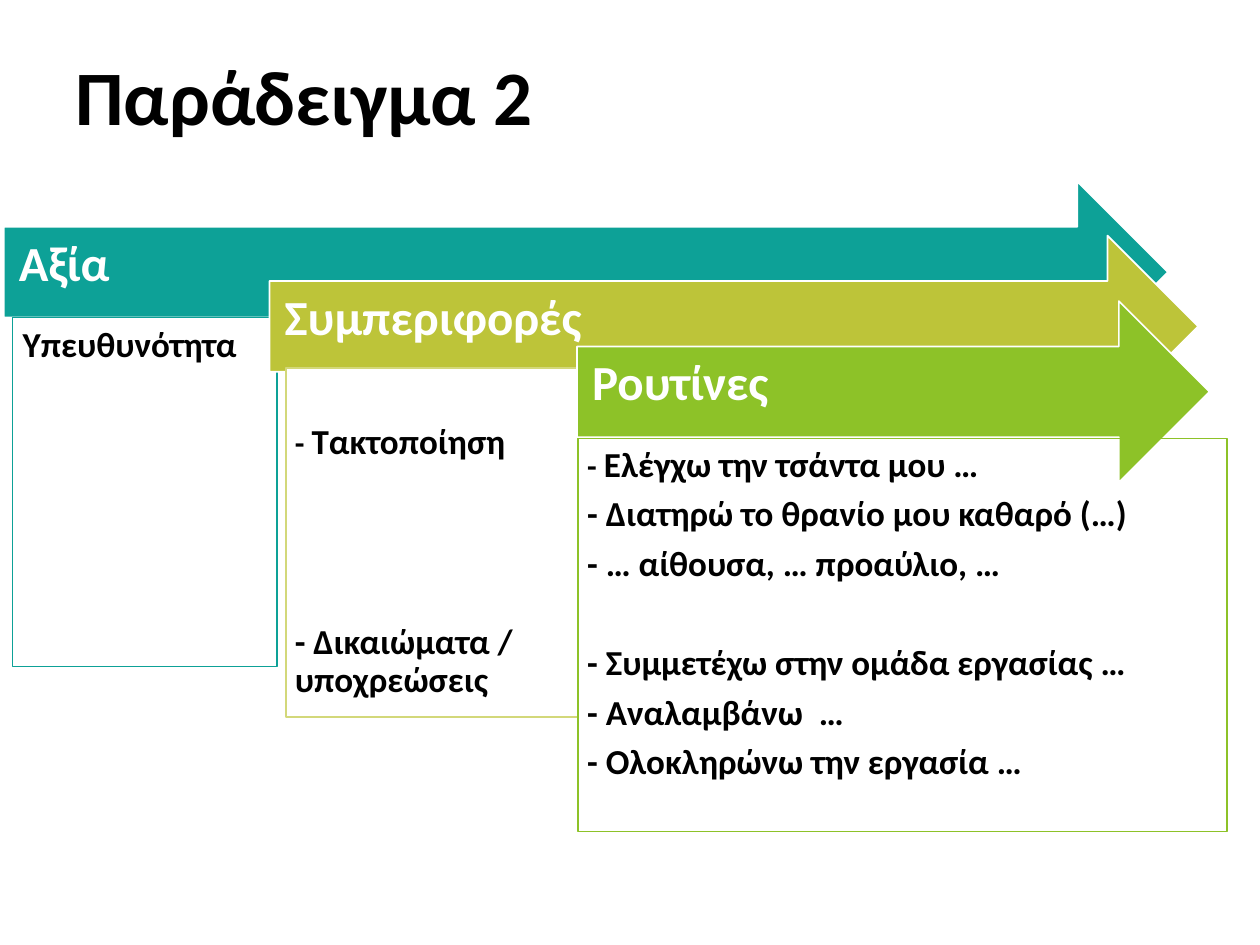
from pptx import Presentation
from pptx import util as u
from pptx.dml.color import RGBColor
from pptx.enum import shapes, text

WHITE = RGBColor(255, 255, 255)
BLACK = RGBColor(0, 0, 0)
TEAL = RGBColor(0x0D, 0xA1, 0x97)
OLIVE = RGBColor(0xBD, 0xC4, 0x39)
PALE = RGBColor(0xD3, 0xD8, 0x7A)
GREEN = RGBColor(0x8D, 0xC2, 0x28)
FONT = "Calibri"

# Content: lines are (blank rows above, text, size of the leading dash)
TITLE = "Παράδειγμα 2"
STEPS = [
    dict(head="Αξία", fill=TEAL, arrow=(0.03, 1.44, 9.24),
         box=(0.1, 2.52, 2.1, 2.77), edge=TEAL, back=WHITE,
         inset=0.08, top=0.08, lines=[(0, "Υπευθυνότητα", 20)]),
    dict(head="Συμπεριφορές", fill=OLIVE, arrow=(2.14, 1.87, 7.37),
         box=(2.27, 2.92, 2.32, 2.77), edge=PALE, back=WHITE,
         inset=0.07, top=0.45,
         lines=[(0, "- Τακτοποίηση", 18),
                (3, "- Δικαιώματα / υποχρεώσεις", 20)]),
    dict(head="Ρουτίνες", fill=GREEN, arrow=(4.58, 2.39, 5.02),
         box=(4.59, 3.48, 5.15, 3.12), edge=GREEN, back=None,
         inset=0.07, top=0.07,
         lines=[(0, "- Ελέγχω την τσάντα μου …", 18),
                (0, "- Διατηρώ το θρανίο μου καθαρό (…)", 20),
                (0, "- … αίθουσα, … προαύλιο, …", 20),
                (1, "- Συμμετέχω στην ομάδα εργασίας …", 20),
                (0, "- Αναλαμβάνω  …", 20),
                (0, "- Ολοκληρώνω την εργασία …", 20)]),
]
HIGH = 1.44         # arrow height
ROW, GAP = 28.6, 6.6  # row pitch and space after, in points


def add_run(para, words, size, color):
    run = para.add_run()
    run.text = words
    font = run.font
    font.name, font.size, font.bold = FONT, u.Pt(size), True
    font.color.rgb = color


def set_frame(shape, left, top, right, bottom, anchor):
    frame = shape.text_frame
    frame.word_wrap = True
    frame.margin_left, frame.margin_top = u.Inches(left), u.Inches(top)
    frame.margin_right, frame.margin_bottom = u.Inches(right), u.Inches(bottom)
    frame.vertical_anchor = anchor
    return frame


def set_para(para):
    para.alignment = text.PP_ALIGN.LEFT
    para.line_spacing = 0.9
    return para


def add_shape(slide, kind, place, fill, edge):
    shape = slide.shapes.add_shape(kind, *map(u.Inches, place))
    shape.shadow.inherit = False
    if fill is None:
        shape.fill.background()
    else:
        shape.fill.solid()
        shape.fill.fore_color.rgb = fill
    shape.line.color.rgb = edge
    shape.line.width = u.Pt(1)
    return shape


def add_step(slide, step):
    # Arrow with its heading
    arrow = add_shape(slide, shapes.MSO_SHAPE.RIGHT_ARROW,
                      (*step["arrow"], HIGH), step["fill"], WHITE)
    frame = set_frame(arrow, 0.12, 0, 0.28, 0.11, text.MSO_ANCHOR.MIDDLE)
    add_run(set_para(frame.paragraphs[0]), step["head"], 28, WHITE)

    # Panel with its lines
    panel = add_shape(slide, shapes.MSO_SHAPE.RECTANGLE,
                      step["box"], step["back"], step["edge"])
    pad = step["inset"]
    frame = set_frame(panel, pad, step["top"], pad, pad, text.MSO_ANCHOR.TOP)
    for i, (skip, words, dash) in enumerate(step["lines"]):
        para = set_para(frame.add_paragraph() if i else frame.paragraphs[0])
        para.space_after = u.Pt(GAP)
        if skip:
            para.space_before = u.Pt(skip * ROW)
        if dash != 20:
            add_run(para, words[:2], dash, BLACK)
            words = words[2:]
        add_run(para, words, 20, BLACK)


def main():
    deck = Presentation()
    deck.slide_width, deck.slide_height = u.Inches(10), u.Inches(7.5)
    slide = deck.slides.add_slide(deck.slide_layouts[6])

    # Title
    title = slide.shapes.add_textbox(*map(u.Inches, (0.5, 0.42, 9, 1.08)))
    frame = set_frame(title, 0.1, 0.05, 0.1, 0.05, text.MSO_ANCHOR.TOP)
    add_run(set_para(frame.paragraphs[0]), TITLE, 44, BLACK)

    # Steps, back to front
    for step in STEPS:
        add_step(slide, step)
    deck.save("out.pptx")


if __name__ == "__main__":
    main()
